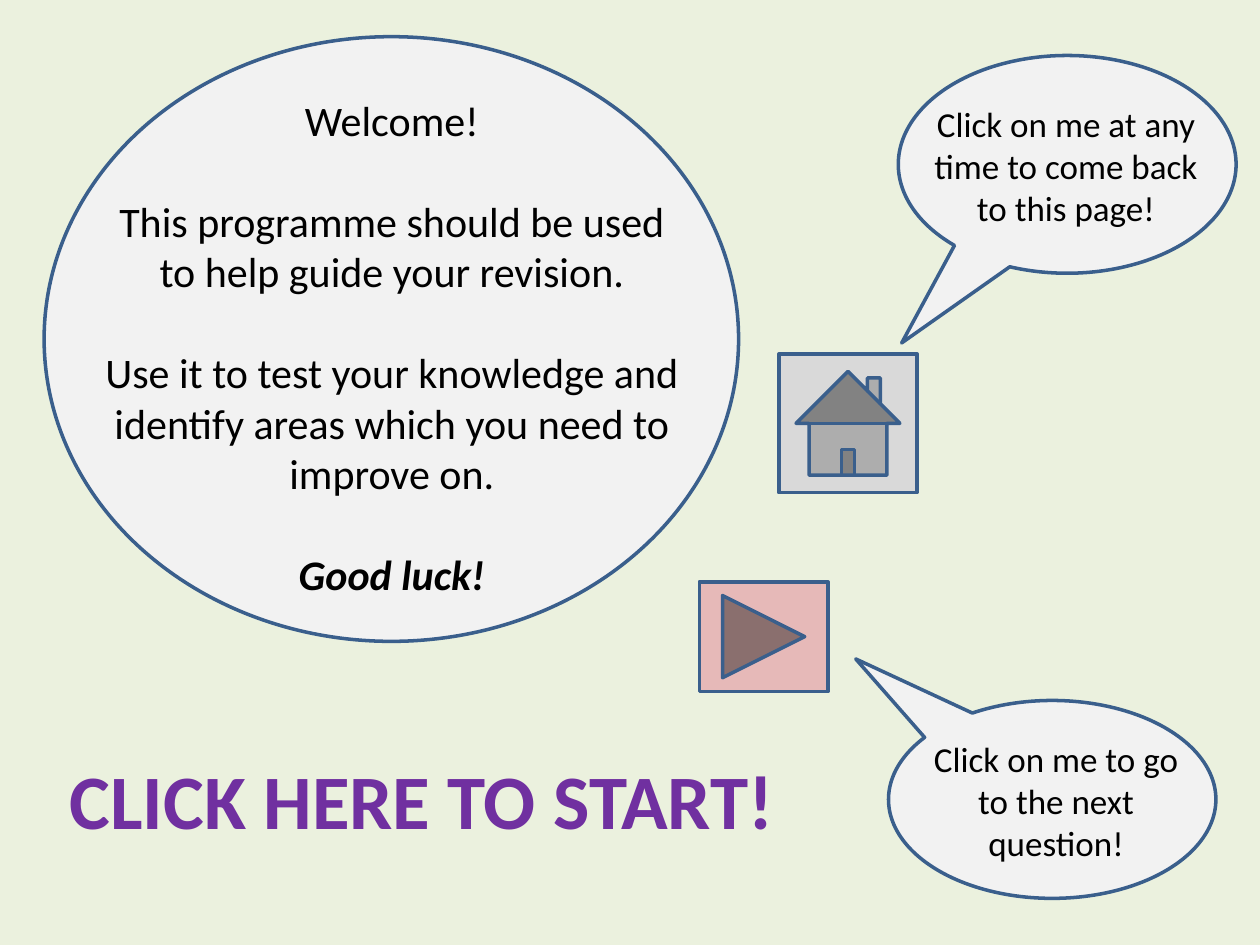
from pptx import Presentation
from pptx.dml.color import RGBColor
from pptx.enum.shapes import MSO_SHAPE
from pptx.enum.text import MSO_ANCHOR, PP_ALIGN
from pptx.util import Cm, Pt

OVAL = MSO_SHAPE.OVAL
BUBBLE = MSO_SHAPE.OVAL_CALLOUT
HOME = MSO_SHAPE.ACTION_BUTTON_HOME
NEXT = MSO_SHAPE.ACTION_BUTTON_FORWARD_OR_NEXT
MIDDLE = MSO_ANCHOR.MIDDLE
CENTER = PP_ALIGN.CENTER

PALE, EDGE, BLACK = "F2F2F2", "3A5F8C", "000000"


def paint(color, code):
    """Set a fill or font colour from a hex string."""
    color.rgb = RGBColor.from_string(code)


def add_form(slide, kind, box, fill):
    """Add an outlined preset shape in the box."""
    form = slide.shapes.add_shape(kind, *map(Cm, box))
    form.shadow.inherit = False
    form.fill.solid()
    paint(form.fill.fore_color, fill)
    paint(form.line.color, EDGE)
    form.line.width = Pt(2)
    return form


def add_text(slide, box, lines, size, code=BLACK, gap=0):
    """Add centred paragraphs in the box and return them."""
    frame = slide.shapes.add_textbox(*map(Cm, box)).text_frame
    frame.word_wrap = True
    frame.vertical_anchor = MIDDLE
    frame.text = "\n".join(lines)
    for i, para in enumerate(frame.paragraphs):
        para.alignment = CENTER
        para.space_before = Pt(gap if i else 0)
        para.font.name = "Calibri"
        para.font.size = Pt(size)
        paint(para.font.color, code)
    return frame.paragraphs


def add_welcome(slide, box):
    """Add the large oval with the greeting."""
    left, top, width, height = box
    add_form(slide, OVAL, box, PALE)
    lines = [
        "Welcome!",
        "This programme should be used to help guide your revision.",
        "Use it to test your knowledge and identify areas which you need to improve on.",
        "Good luck!",
    ]
    inner = (left + 0.81, top + 0.99, width - 1.6, height - 1.67)
    last = add_text(slide, inner, lines, 24, gap=29)[-1]
    last.font.bold = True
    last.font.italic = True


def add_bubble(slide, box, tip, text, drop, turn=0):
    """Add a speech bubble whose tail ends at the tip."""
    left, top, width, height = box
    form = add_form(slide, BUBBLE, box, PALE)
    form.adjustments[0], form.adjustments[1] = tip
    form.rotation = turn
    add_text(slide, (left + 0.38, top + drop, 6, 2.82), [text], 20)


def add_start(slide, box):
    """Add the call to start."""
    line = add_text(slide, box, ["CLICK HERE TO START!"], 44, "7030A0")[0]
    line.font.bold = True


def main():
    """Build and save the welcome slide."""
    deck = Presentation()
    deck.slide_width, deck.slide_height = Cm(25.4), Cm(19.05)
    slide = deck.slides.add_slide(deck.slide_layouts[6])
    slide.background.fill.solid()
    paint(slide.background.fill.fore_color, "EBF1DE")

    add_welcome(slide, (0.89, 0.74, 14, 12.19))
    add_form(slide, HOME, (15.7, 7.14, 2.79, 2.79), "D9D9D9")
    add_bubble(slide, (18.11, 1.12, 6.81, 4.39), (-0.49, 0.82),
               "Click on me at any time to come back to this page!", 0.81)
    add_form(slide, NEXT, (14.1, 11.73, 2.59, 2.21), "E6B9B8")
    add_bubble(slide, (17.91, 14.12, 6.6, 3.99), (0.6, 0.71),
               "Click on me to go to the next question!", 0.61, 180)
    add_start(slide, (0.71, 14.95, 15.6, 2.3))
    deck.save("out.pptx")


if __name__ == "__main__":
    main()
